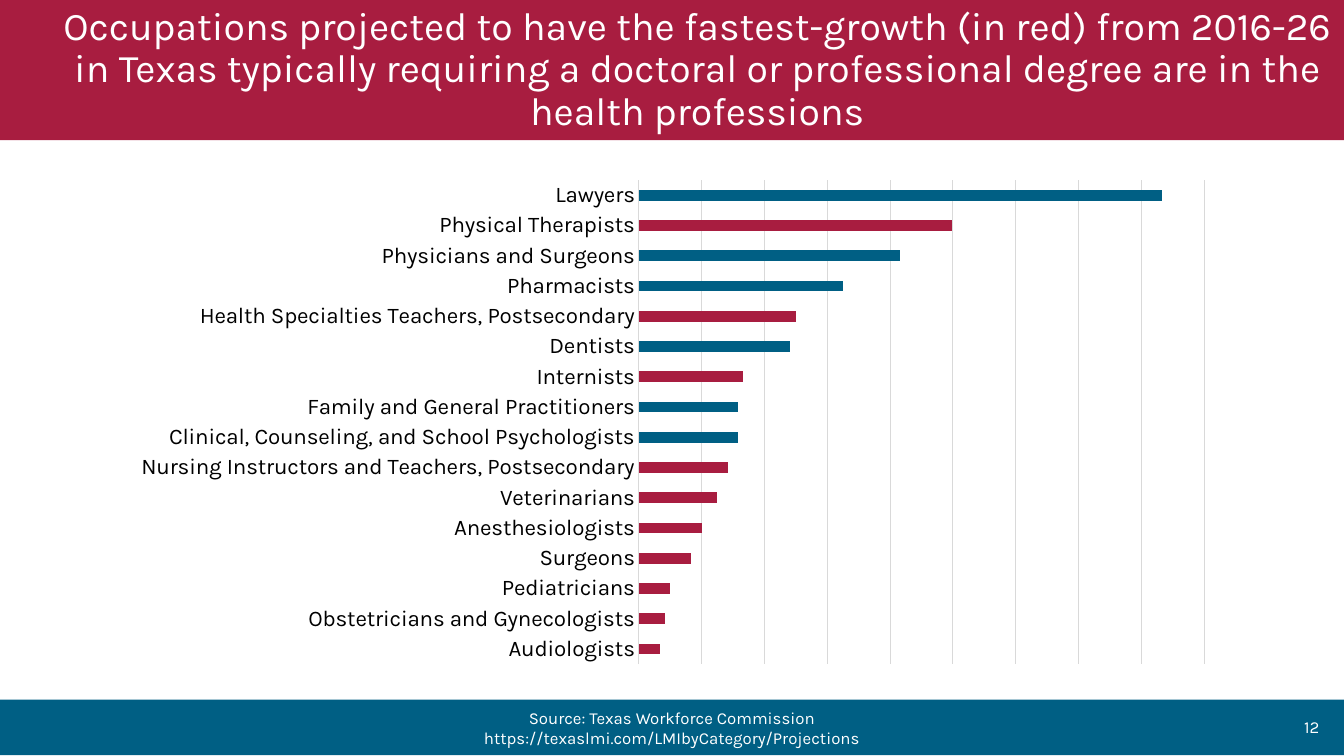
"""Build a slide ranking Texas doctoral and professional occupations in a bar chart."""

from dataclasses import dataclass
from typing import Optional

import pptx
import pptx.chart.data
import pptx.dml.color
import pptx.enum.chart
import pptx.enum.shapes
import pptx.enum.text
import pptx.oxml
import pptx.util
from pptx.util import Cm

ALIGN = pptx.enum.text.PP_ALIGN
RGB = pptx.dml.color.RGBColor


@dataclass(frozen=True)
class Theme:
    """Colours, font and type sizes of the slide."""

    red: RGB = RGB.from_string("A81D40")
    blue: RGB = RGB.from_string("005F84")
    white: RGB = RGB.from_string("FFFFFF")
    black: RGB = RGB.from_string("000000")
    grid: RGB = RGB.from_string("D9D9D9")
    font: str = "Karla"
    title_size: int = 28
    label_size: int = 16
    footer_size: int = 12


@dataclass(frozen=True)
class Panel:
    """A rectangle with optional fill and text, measured in centimetres."""

    left: float
    top: float
    width: float
    height: float
    fill: Optional[RGB] = None
    text: str = ""
    size: int = 12
    align: ALIGN = ALIGN.CENTER
    indent: float = 0
    line_spacing: float = 1.0


@dataclass(frozen=True)
class Occupation:
    """One bar of the chart."""

    name: str
    value: int
    fastest: bool = False


THEME = Theme()
SLIDE_WIDTH, SLIDE_HEIGHT = 33.87, 19.05
GRID_STEP, GRID_COUNT = 12.02, 9

PANELS = [
    Panel(0, 17.63, SLIDE_WIDTH, 1.4, fill=THEME.blue),
    Panel(10, 17.82, 13.87, 1.02, size=THEME.footer_size,
          text="Source: Texas Workforce Commission "
               "https://texaslmi.com/LMIbyCategory/Projections"),
    Panel(25.88, 17.81, 7.62, 1.02, text="12", size=THEME.footer_size,
          align=ALIGN.RIGHT),
    Panel(0, 0, SLIDE_WIDTH, 3.53, fill=THEME.red, size=THEME.title_size,
          indent=1.27, line_spacing=0.9,
          text="Occupations projected to have the fastest-growth (in red) "
               "from 2016-26 in Texas typically requiring a doctoral or "
               "professional degree are in the health professions"),
]

OCCUPATIONS = [
    Occupation("Audiologists", 4, True),
    Occupation("Obstetricians and Gynecologists", 5, True),
    Occupation("Pediatricians", 6, True),
    Occupation("Surgeons", 10, True),
    Occupation("Anesthesiologists", 12, True),
    Occupation("Veterinarians", 15, True),
    Occupation("Nursing Instructors and Teachers, Postsecondary", 17, True),
    Occupation("Clinical, Counseling, and School Psychologists", 19),
    Occupation("Family and General Practitioners", 19),
    Occupation("Internists", 20, True),
    Occupation("Dentists", 29),
    Occupation("Health Specialties Teachers, Postsecondary", 30, True),
    Occupation("Pharmacists", 39),
    Occupation("Physicians and Surgeons", 50),
    Occupation("Physical Therapists", 60, True),
    Occupation("Lawyers", 100),
]


def style_font(font: pptx.text.text.Font, size: int, color: RGB) -> None:
    """Apply the theme font with a size and a colour."""
    font.name = THEME.font
    font.size = pptx.util.Pt(size)
    font.color.rgb = color


def draw_panel(page: pptx.slide.Slide, panel: Panel) -> None:
    """Draw a filled band or a plain text box."""
    frame = [Cm(n) for n in (panel.left, panel.top, panel.width, panel.height)]
    if panel.fill is None:
        box = page.shapes.add_textbox(*frame)
    else:
        box = page.shapes.add_shape(
            pptx.enum.shapes.MSO_SHAPE.RECTANGLE, *frame)
        box.shadow.inherit = False
        box.fill.solid()
        box.fill.fore_color.rgb = panel.fill
        box.line.fill.background()
    if not panel.text:
        return
    box.text_frame.word_wrap = True
    box.text_frame.vertical_anchor = pptx.enum.text.MSO_ANCHOR.MIDDLE
    box.text_frame.text = panel.text
    para = box.text_frame.paragraphs[0]
    para.alignment = panel.align
    para.line_spacing = panel.line_spacing
    if panel.indent:
        properties = para._p.get_or_add_pPr()
        properties.set("marL", str(Cm(panel.indent)))
        properties.set("indent", "0")
    for span in para.runs:
        style_font(span.font, panel.size, THEME.white)


def place_plot(chart: pptx.chart.chart.Chart, left: float, top: float,
               width: float, height: float) -> None:
    """Fix the inner plot area as fractions of the chart."""
    plot_area = chart._chartSpace.chart.plotArea
    for layout in plot_area.findall(pptx.oxml.ns.qn("c:layout")):
        plot_area.remove(layout)
    plot_area.insert(0, pptx.oxml.parse_xml(
        f'<c:layout {pptx.oxml.ns.nsdecls("c")}><c:manualLayout>'
        '<c:layoutTarget val="inner"/><c:xMode val="edge"/>'
        f'<c:yMode val="edge"/><c:x val="{left}"/><c:y val="{top}"/>'
        f'<c:w val="{width}"/><c:h val="{height}"/>'
        '</c:manualLayout></c:layout>'))


def draw_chart(page: pptx.slide.Slide, occupations: list[Occupation]) -> None:
    """Draw the horizontal bars, with the fastest-growing jobs in red."""
    data = pptx.chart.data.CategoryChartData()
    data.categories = [job.name for job in occupations]
    data.add_series("Series 1", [job.value for job in occupations])
    chart = page.shapes.add_chart(
        pptx.enum.chart.XL_CHART_TYPE.BAR_CLUSTERED,
        Cm(2.97), Cm(4.29), Cm(27.94), Cm(12.7), data).chart
    chart.has_title = False
    chart.has_legend = False
    style_font(chart.font, THEME.label_size, THEME.black)
    place_plot(chart, 0.47, 0.02, 0.51, 0.96)

    names = chart.category_axis
    names.major_tick_mark = pptx.enum.chart.XL_TICK_MARK.NONE
    style_font(names.tick_labels.font, THEME.label_size, THEME.black)
    values = chart.value_axis
    values.visible = False
    values.minimum_scale = 0
    values.maximum_scale = GRID_STEP * GRID_COUNT
    values.major_unit = GRID_STEP
    values.has_major_gridlines = True
    for line in (names.format.line, values.major_gridlines.format.line):
        line.color.rgb = THEME.grid
        line.width = pptx.util.Pt(0.75)

    plot = chart.plots[0]
    plot.gap_width = 182
    plot.vary_by_categories = False
    bars = plot.series[0]
    bars.format.fill.solid()
    bars.format.fill.fore_color.rgb = THEME.blue
    for index, job in enumerate(occupations):
        if job.fastest:
            fill = bars.points[index].format.fill
            fill.solid()
            fill.fore_color.rgb = THEME.red


def main() -> None:
    """Assemble and save the deck."""
    deck = pptx.Presentation()
    deck.slide_width, deck.slide_height = Cm(SLIDE_WIDTH), Cm(SLIDE_HEIGHT)
    page = deck.slides.add_slide(deck.slide_layouts[6])
    for panel in PANELS:
        draw_panel(page, panel)
    draw_chart(page, OCCUPATIONS)
    deck.save("out.pptx")


if __name__ == "__main__":
    main()
